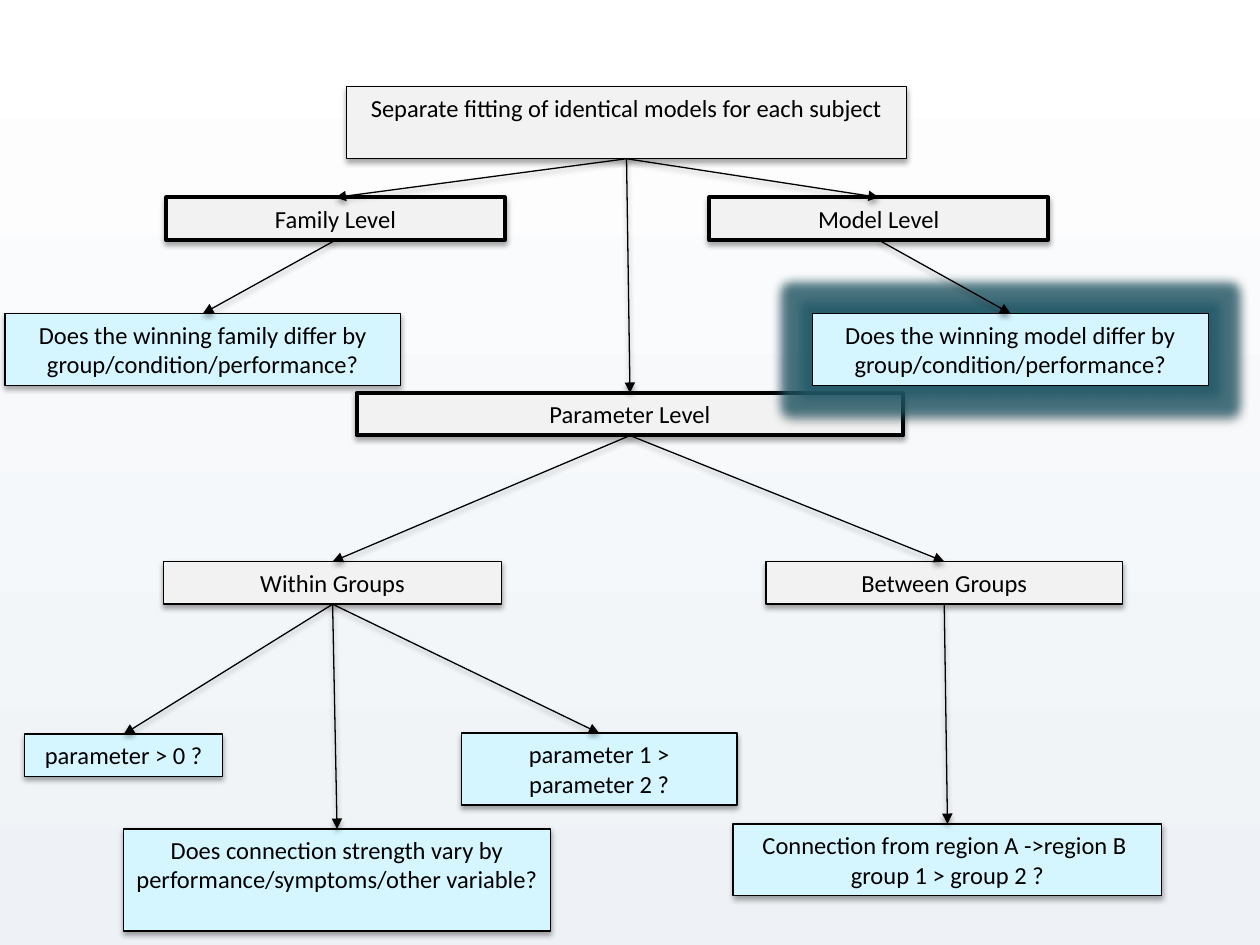
from lxml.etree import SubElement
from pptx import Presentation
from pptx.dml.color import RGBColor
from pptx.enum.shapes import MSO_CONNECTOR, MSO_SHAPE
from pptx.enum.text import MSO_ANCHOR, MSO_AUTO_SIZE, PP_ALIGN
from pptx.oxml.ns import qn
from pptx.util import Cm, Pt

COLORS = {
    "black": "000000",
    "level": "F2F2F2",
    "question": "D5F5FF",
    "glow": "215968",
    "background_top": "FFFFFF",
    "background_bottom": "EEF2F6",
}
FRAME_FORMAT = {
    "word_wrap": True,
    "auto_size": MSO_AUTO_SIZE.NONE,
    "vertical_anchor": MSO_ANCHOR.TOP,
}
FONT_FORMAT = {"name": "Calibri", "size": Pt(14)}
THIN, THICK = Pt(0.75), Pt(2.25)
ONE_LINE, TWO_LINES, THREE_LINES = 0.86, 1.45, 2.06
BOTTOM, TOP = 2, 0


def rgb(name):
    """Return the named colour."""
    return RGBColor.from_string(COLORS[name])


def apply_format(target, values):
    """Set each attribute of the target from a dict."""
    for name, value in values.items():
        setattr(target, name, value)


def add_effect(effects, tag, color, alpha, **attributes):
    """Append a coloured glow or shadow to an effect list."""
    effect = SubElement(effects, qn(tag), {key: str(value) for key, value in attributes.items()})
    fill = SubElement(effect, qn("a:srgbClr"), val=COLORS[color])
    SubElement(fill, qn("a:alpha"), val=str(alpha * 1000))


def add_shadow(effects):
    """Append the soft drop shadow shared by boxes and arrows."""
    add_effect(effects, "a:outerShdw", "black", 35, blurRad=Pt(3.1), dist=Pt(1.8),
               dir=90 * 60000, rotWithShape=0)


def add_box(slide, region, place, text, fill="level", line_width=THIN, glow=False):
    """Add a captioned rectangle placed relative to the region's corner."""
    left, top, width, height = place
    shape = slide.shapes.add_shape(
        MSO_SHAPE.RECTANGLE, Cm(region[0] + left), Cm(region[1] + top), Cm(width), Cm(height))
    shape.fill.solid()
    shape.fill.fore_color.rgb = rgb(fill)
    shape.line.color.rgb = rgb("black")
    shape.line.width = line_width
    shape.shadow.inherit = False
    effects = shape._element.spPr.find(qn("a:effectLst"))
    if glow:
        add_effect(effects, "a:glow", "glow", 75, rad=Pt(12))
    add_shadow(effects)

    apply_format(shape.text_frame, FRAME_FORMAT)
    paragraph = shape.text_frame.paragraphs[0]
    paragraph.text = text
    paragraph.alignment = PP_ALIGN.CENTER
    for run in paragraph.runs:
        apply_format(run.font, FONT_FORMAT)
        run.font.color.rgb = rgb("black")
    return shape


def add_arrows(slide, parent, *children):
    """Join the foot of a parent box to the head of each child box."""
    for child in children:
        arrow = slide.shapes.add_connector(MSO_CONNECTOR.STRAIGHT, 0, 0, 0, 0)
        arrow.begin_connect(parent, BOTTOM)
        arrow.end_connect(child, TOP)
        arrow.line.color.rgb = rgb("black")
        arrow.line.width = THIN
        SubElement(arrow.line._get_or_add_ln(), qn("a:tailEnd"), type="triangle")
        add_shadow(SubElement(arrow._element.spPr, qn("a:effectLst")))


def add_background(slide):
    """Fill the slide with a vertical gradient."""
    fill = slide.background.fill
    fill.gradient()
    fill.gradient_angle = 270
    for stop, name in zip(fill.gradient_stops, ("background_top", "background_bottom")):
        stop.color.rgb = rgb(name)


def add_parameter_tree(slide, region):
    """Add the parameter level with its group comparisons and return its top box."""
    parameter = add_box(slide, region, (6.69, 0, 11.02, ONE_LINE), "Parameter Level",
                        line_width=THICK)
    within = add_box(slide, region, (2.8, 3.4, 6.81, ONE_LINE), "Within Groups")
    between = add_box(slide, region, (14.94, 3.4, 7.19, ONE_LINE), "Between Groups")
    within_questions = [
        add_box(slide, region, place, text, "question")
        for place, text in (
            ((0, 6.88, 3.99, ONE_LINE), "parameter > 0 ?"),
            ((8.8, 6.86, 5.56, TWO_LINES), "parameter 1 > parameter 2 ?"),
            ((1.99, 8.79, 8.61, THREE_LINES),
             "Does connection strength vary by performance/symptoms/other variable?"),
        )
    ]
    connection = add_box(slide, region, (14.28, 8.69, 8.64, TWO_LINES),
                         "Connection from region A ->region B \vgroup 1 > group 2 ?", "question")
    add_arrows(slide, parameter, within, between)
    add_arrows(slide, within, *within_questions)
    add_arrows(slide, between, connection)
    return parameter


def add_selection_tree(slide, region):
    """Add the fitting step with its family and model branches and return its top box."""
    fitting = add_box(slide, region, (6.88, 0, 11.3, TWO_LINES),
                      "Separate fitting of identical models for each subject")
    for name, level_left, question_left, glow in (
            ("family", 3.25, 0, False), ("model", 14.2, 16.28, True)):
        level = add_box(slide, region, (level_left, 2.23, 6.83, ONE_LINE),
                        f"{name.title()} Level", line_width=THICK)
        question = add_box(slide, region, (question_left, 4.57, 7.98, TWO_LINES),
                           f"Does the winning {name} differ by group/condition/performance?",
                           "question", glow=glow)
        add_arrows(slide, fitting, level)
        add_arrows(slide, level, question)
    return fitting


def main():
    """Build and save the analysis overview slide."""
    presentation = Presentation()
    apply_format(presentation, {"slide_width": Cm(25.4), "slide_height": Cm(19.05)})
    slide = presentation.slides.add_slide(presentation.slide_layouts[6])
    add_background(slide)
    parameter = add_parameter_tree(slide, (0.5, 7.92))
    fitting = add_selection_tree(slide, (0.1, 1.75))
    add_arrows(slide, fitting, parameter)
    presentation.save("out.pptx")


if __name__ == "__main__":
    main()
